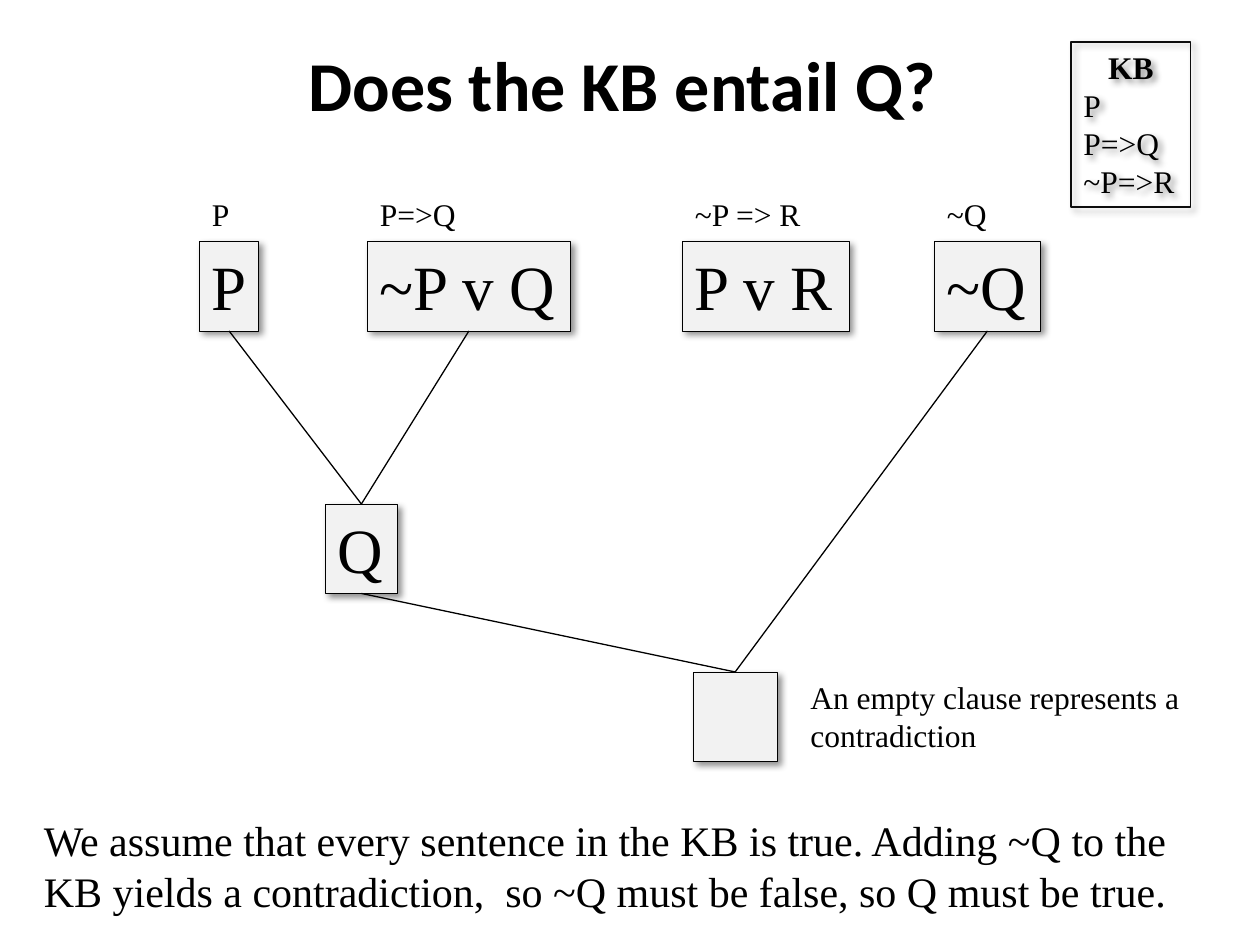
from dataclasses import dataclass
from lxml.etree import SubElement
from pptx import Presentation
from pptx.dml.color import RGBColor
from pptx.enum.shapes import MSO_CONNECTOR, MSO_SHAPE
from pptx.enum.text import MSO_ANCHOR, PP_ALIGN
from pptx.oxml.ns import qn
from pptx.util import Inches, Pt


@dataclass(frozen=True)
class Theme:
    ink: str = "000000"
    frame: str = "0D0D0D"
    panel: str = "F2F2F2"
    head: str = "Calibri"
    body: str = "Times New Roman"
    title: int = 40
    clause: int = 36
    text: int = 24
    note: int = 18
    hair: float = 0.25
    rule: float = 0.75


THEME = Theme()
WIDE, HIGH = 10, 7.5
CELL = WIDE / 120
BOX = 0.71
TOP, BOTTOM = 0, 2

# column, width in inches, sentence, clause
CLAUSES = [
    (19, 0.47, "P", "P"),
    (35, 1.61, "P=>Q", "~P v Q"),
    (65, 1.32, "~P => R", "P v R"),
    (89, 0.84, "~Q", "~Q"),
]


def place(col, row, wide, high):
    """Turn a grid column and row, and a size in inches, into lengths."""
    return [Inches(n) for n in (col * CELL, row * CELL, wide, high)]


def style(para, size, font=THEME.body, bold=False, align=PP_ALIGN.LEFT):
    para.alignment = align
    for run in para.runs:
        run.font.name = font
        run.font.size = Pt(size)
        run.font.bold = bold
        run.font.color.rgb = RGBColor.from_string(THEME.ink)


def effects(shape):
    """Give the shape an empty effect list, which stops theme shadows."""
    props = shape._element.spPr
    for old in props.findall(qn("a:effectLst")):
        props.remove(old)
    return SubElement(props, qn("a:effectLst"))


def shade(shape):
    drop = SubElement(effects(shape), qn("a:outerShdw"), blurRad=str(Pt(4)),
                      dist=str(Pt(3)), dir=str(45 * 60000), algn="tl",
                      rotWithShape="0")
    color = SubElement(drop, qn("a:srgbClr"), val=THEME.ink)
    SubElement(color, qn("a:alpha"), val="43000")


def label(slide, area, text, size, **look):
    box = slide.shapes.add_textbox(*area)
    box.text_frame.word_wrap = True
    box.text_frame.text = text
    style(box.text_frame.paragraphs[0], size, **look)
    return box


def panel(slide, area, fill, line, width):
    box = slide.shapes.add_shape(MSO_SHAPE.RECTANGLE, *area)
    if fill:
        box.fill.solid()
        box.fill.fore_color.rgb = RGBColor.from_string(fill)
    else:
        box.fill.background()
    box.line.color.rgb = RGBColor.from_string(line)
    box.line.width = Pt(width)
    shade(box)
    box.text_frame.word_wrap = False
    box.text_frame.vertical_anchor = MSO_ANCHOR.TOP
    return box


def clause(slide, col, row, wide, text=""):
    box = panel(slide, place(col, row, wide, BOX),
                THEME.panel, THEME.ink, THEME.hair)
    if text:
        box.text_frame.text = text
        style(box.text_frame.paragraphs[0], THEME.clause)
    return box


def facts(slide):
    """Draw the list of sentences in the KB."""
    box = panel(slide, place(102, 4, 0.95, 1.31),
                None, THEME.frame, THEME.rule)
    frame = box.text_frame
    frame.text = "KB\nP\nP=>Q\n~P=>R"
    first, *rest = frame.paragraphs
    style(first, THEME.note, bold=True, align=PP_ALIGN.CENTER)
    for para in rest:
        style(para, THEME.note)


def resolve(slide, parents, child):
    """Link two parent clauses to the clause that follows from them."""
    for parent in parents:
        line = slide.shapes.add_connector(MSO_CONNECTOR.STRAIGHT, 0, 0, 0, 0)
        line.begin_connect(parent, BOTTOM)
        line.end_connect(child, TOP)
        line.line.color.rgb = RGBColor.from_string(THEME.ink)
        line.line.width = Pt(THEME.rule)
        effects(line)


def main():
    deck = Presentation()
    deck.slide_width, deck.slide_height = Inches(WIDE), Inches(HIGH)
    slide = deck.slides.add_slide(deck.slide_layouts[6])

    title = label(slide, place(9, 2, 8.5, 1), "Does the KB entail Q? ",
                  THEME.title, font=THEME.head, bold=True,
                  align=PP_ALIGN.CENTER)
    title.text_frame.vertical_anchor = MSO_ANCHOR.MIDDLE
    facts(slide)

    boxes = []
    for col, wide, source, text in CLAUSES:
        label(slide, place(col, 18, 1.58, 0.4), source, THEME.note)
        boxes.append(clause(slide, col, 23, wide, text))
    p, rule, _, denied = boxes

    proved = clause(slide, 31, 48, 0.57, "Q")
    resolve(slide, (p, rule), proved)
    empty = clause(slide, 66, 64, 0.67)
    resolve(slide, (proved, denied), empty)

    label(slide, place(76, 64, 3.25, BOX),
          "An empty clause represents a contradiction", THEME.note)
    label(slide, place(3, 77, 9.42, 0.91),
          "We assume that every sentence in the KB is true. Adding ~Q to the "
          "KB yields a contradiction,  so ~Q must be false, so Q must be true.",
          THEME.text)
    deck.save("out.pptx")


if __name__ == "__main__":
    main()
